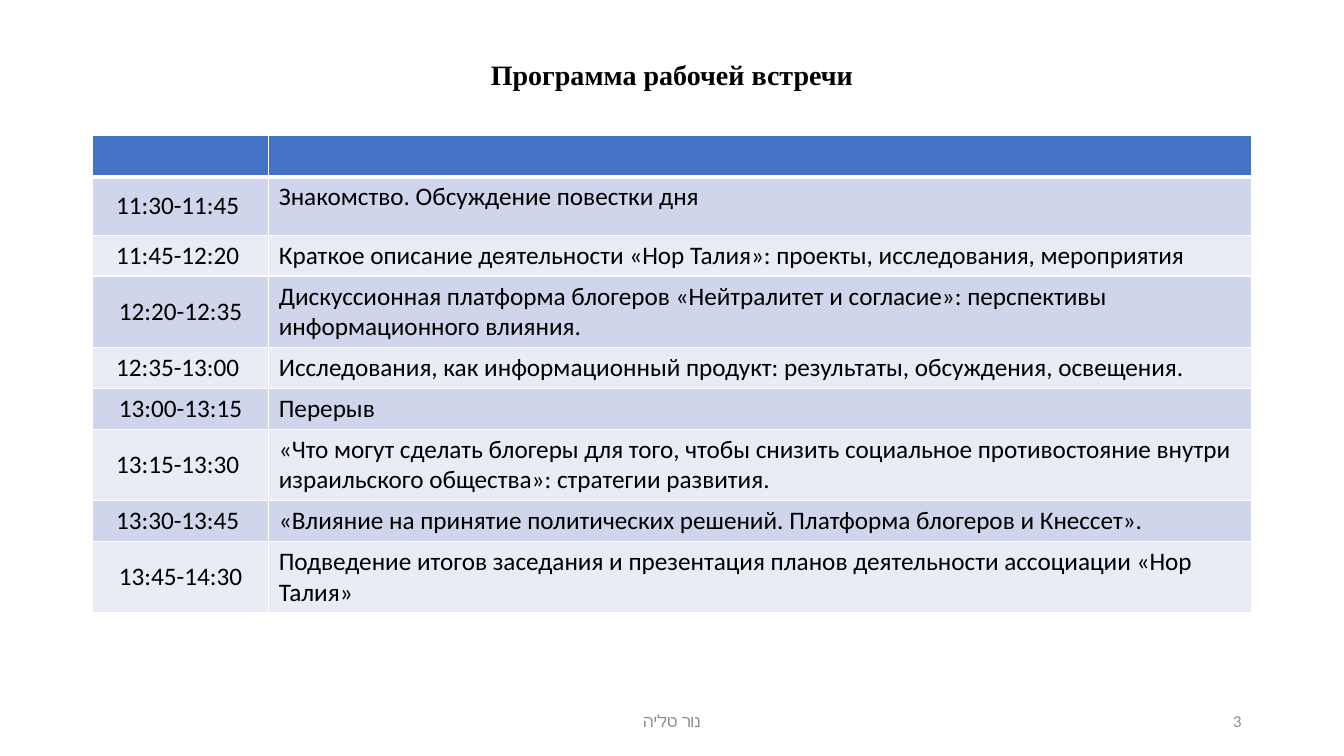
from lxml import etree
from pptx import Presentation
from pptx.dml.color import RGBColor
from pptx.enum.text import MSO_ANCHOR, PP_ALIGN
from pptx.oxml.ns import qn
from pptx.util import Pt

CENTER, LEFT, RIGHT = PP_ALIGN.CENTER, PP_ALIGN.LEFT, PP_ALIGN.RIGHT
TOP, MIDDLE = MSO_ANCHOR.TOP, MSO_ANCHOR.MIDDLE

HEADER_FILL = "4472C4"
BAND_FILLS = ("CFD5EA", "E9EBF5")
GREY = "8C8C8C"
HEADER_HEIGHT = 29.2
LINE_HEIGHTS = {1: 29.2, 2: 51}
TIME_WIDTH = 126

AGENDA = [
    ("11:30-11:45 ", "Знакомство. Обсуждение повестки дня", 41.8),
    ("11:45-12:20 ", "Краткое описание деятельности «Нор Талия»: проекты, исследования, мероприятия", LINE_HEIGHTS[1]),
    ("12:20-12:35", "Дискуссионная платформа блогеров «Нейтралитет и согласие»: перспективы информационного влияния.", LINE_HEIGHTS[2]),
    ("12:35-13:00 ", "Исследования, как информационный продукт: результаты, обсуждения, освещения.", LINE_HEIGHTS[1]),
    ("13:00-13:15", "Перерыв", LINE_HEIGHTS[1]),
    ("13:15-13:30 ", "«Что могут сделать блогеры для того, чтобы снизить социальное противостояние внутри израильского общества»: стратегии развития.", LINE_HEIGHTS[2]),
    ("13:30-13:45 ", "«Влияние на принятие политических решений. Платформа блогеров и Кнессет».", LINE_HEIGHTS[1]),
    ("13:45-14:30", "Подведение итогов заседания и презентация планов деятельности ассоциации «Нор Талия»", LINE_HEIGHTS[2]),
]


def color(value):
    return RGBColor.from_string(value)


def write(frame, text, size, align, ink="000000", face="Calibri", bold=False):
    paragraph = frame.paragraphs[0]
    paragraph.text = text
    paragraph.alignment = align
    font = paragraph.font
    font.size, font.name, font.bold = Pt(size), face, bold
    font.color.rgb = color(ink)
    return paragraph


def add_label(slide, box, text, size, align, **style):
    frame = slide.shapes.add_textbox(*map(Pt, box)).text_frame
    frame.word_wrap = True
    frame.vertical_anchor = MIDDLE
    return write(frame, text, size, align, **style)


def set_borders(cell, **widths):
    properties = cell._tc.get_or_add_tcPr()
    for position, side in enumerate("LRTB"):
        line = etree.Element(qn("a:ln" + side), w=str(Pt(widths.get(side, 1))))
        fill = etree.SubElement(line, qn("a:solidFill"))
        etree.SubElement(fill, qn("a:srgbClr"), val="FFFFFF")
        properties.insert(position, line)


def paint(cell, fill, **widths):
    cell.fill.solid()
    cell.fill.fore_color.rgb = color(fill)
    set_borders(cell, **widths)


def add_title(slide, box):
    title = add_label(slide, box, "Программа рабочей встречи", 20, CENTER,
                      face="Times New Roman", bold=True)
    title.line_spacing = 0.9


def add_agenda(slide, box):
    left, top, width = box
    heights = [HEADER_HEIGHT] + [height for _, _, height in AGENDA]
    agenda = slide.shapes.add_table(len(heights), 2, Pt(left), Pt(top),
                                    Pt(width), Pt(sum(heights))).table
    agenda.horz_banding = False
    agenda.columns[0].width = Pt(TIME_WIDTH)
    agenda.columns[1].width = Pt(width - TIME_WIDTH)
    for row, height in zip(agenda.rows, heights):
        row.height = Pt(height)
    for header in agenda.rows[0].cells:
        paint(header, HEADER_FILL, B=3)
    for index, (time, topic, _) in enumerate(AGENDA):
        time_cell, topic_cell = agenda.rows[index + 1].cells
        for cell, text, align, anchor in ((time_cell, time, CENTER, MIDDLE),
                                          (topic_cell, topic, LEFT, TOP)):
            write(cell.text_frame, text, 18, align)
            cell.vertical_anchor = anchor
            paint(cell, BAND_FILLS[index % 2], T=3 if index == 0 else 1)


def add_footer(slide, box):
    left, top, width, height = box
    name_width, number_width = 324, 216
    add_label(slide, (left + (width - name_width) / 2, top, name_width, height),
              "נור טליה", 12, CENTER, ink=GREY)
    add_label(slide, (left + width - number_width, top, number_width, height),
              "3", 12, RIGHT, ink=GREY)


def main():
    deck = Presentation()
    deck.slide_width, deck.slide_height = Pt(960), Pt(540)
    slide = deck.slides.add_slide(deck.slide_layouts[6])
    margin, content_width = 66, 828
    add_title(slide, (margin, 29, content_width, 51))
    add_agenda(slide, (margin, 97, content_width))
    add_footer(slide, (margin, 500.5, content_width, 28.75))
    deck.save("out.pptx")


if __name__ == "__main__":
    main()
